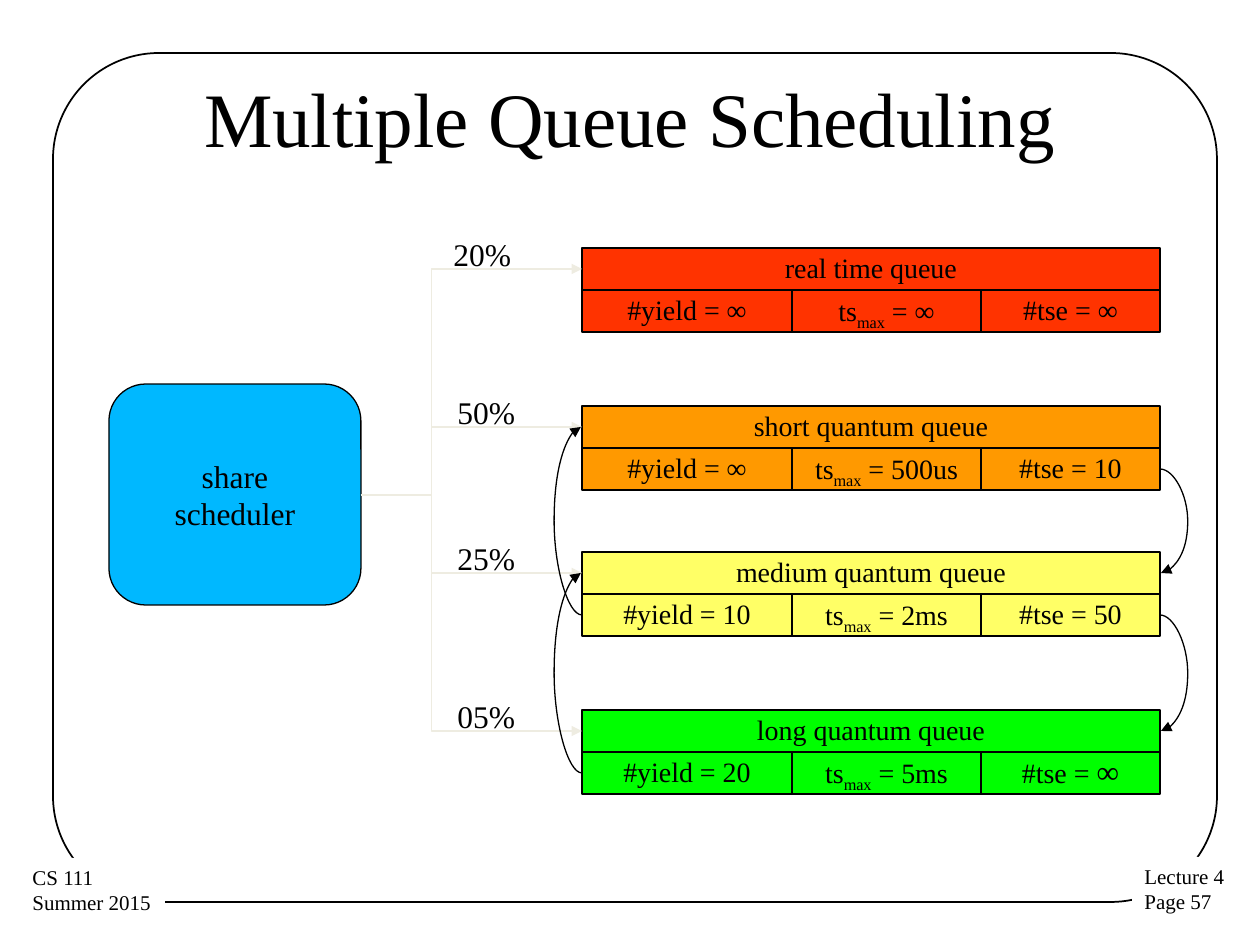
from dataclasses import dataclass

from lxml.etree import SubElement
from pptx import Presentation
from pptx.dml.color import RGBColor
from pptx.enum.shapes import MSO_CONNECTOR as Link, MSO_SHAPE as Kind
from pptx.enum.text import MSO_ANCHOR as Anchor, PP_ALIGN as Align
from pptx.oxml.ns import qn
from pptx.util import Pt

PX = 914400 / 126  # EMU in one px


@dataclass(frozen=True)
class Theme:
    font: str = "Times New Roman"
    ink: str = "000000"
    paper: str = "FFFFFF"
    pale: str = "EEECE1"
    blue: str = "00B8FF"
    red: str = "FF3300"
    orange: str = "FF9900"
    yellow: str = "FFFF66"
    green: str = "00FF00"
    title: int = 44
    body: int = 18
    cell: int = 16
    foot: int = 12
    thin: float = 0.75


T = Theme()
ROW = 42
COLS = (210, 189, 179)
# top, name, colour, share, label left, yield, time slice, tse runs
QUEUES = (
    (248, "real time queue", T.red, "20%", 441, "∞", "∞", [("#tse = ∞", T.cell)]),
    (406, "short quantum queue", T.orange, "50%", 445, "∞", "500us",
     [("#tse = 10", T.cell)]),
    (552, "medium quantum queue", T.yellow, "25%", 445, "10", "2ms",
     [("#tse = 50", T.cell)]),
    (710, "long quantum queue", T.green, "05%", 445, "20", "5ms",
     [("#tse = ", T.cell), ("∞", T.body)]),
)


def emu(*nums):
    return [round(n * PX) for n in nums]


def rgb(code):
    return RGBColor.from_string(code)


def write(shape, paras, align=Align.LEFT, anchor=Anchor.TOP, wrap=False, space=None):
    """Each paragraph is a list of runs: (text, size) or (text, size, baseline)."""
    frame = shape.text_frame
    frame.word_wrap = wrap
    frame.vertical_anchor = anchor
    for i, runs in enumerate(paras):
        para = frame.add_paragraph() if i else frame.paragraphs[0]
        para.alignment = align
        para.line_spacing = space
        for text, size, *base in runs:
            run = para.add_run()
            run.text = text
            run.font.name = T.font
            run.font.size = Pt(size)
            run.font.color.rgb = rgb(T.ink)
            if base:
                run.font._element.set("baseline", str(base[0]))


def block(slide, kind, box, fill=None, line=None, width=T.thin):
    shape = slide.shapes.add_shape(kind, *emu(*box))
    shape.shadow.inherit = False
    if fill:
        shape.fill.solid()
        shape.fill.fore_color.rgb = rgb(fill)
    else:
        shape.fill.background()
    if line:
        shape.line.color.rgb = rgb(line)
        shape.line.width = Pt(width)
    else:
        shape.line.fill.background()
    return shape


def label(slide, box, paras, **style):
    write(slide.shapes.add_textbox(*emu(*box)), paras, **style)


def arrow(slide, kind, start, end, bend, color):
    """The bend is a share of the width, where the middle part runs."""
    link = slide.shapes.add_connector(kind, *emu(*start, *end))
    link.line.color.rgb = rgb(color)
    link.line.width = Pt(T.thin)
    props = link._element.spPr
    SubElement(link.line._get_or_add_ln(), qn("a:tailEnd"), type="triangle")
    SubElement(props, qn("a:effectLst"))
    guides = props.find(qn("a:prstGeom")).get_or_add_avLst()
    SubElement(guides, qn("a:gd"), name="adj1", fmla=f"val {round(bend * 100000)}")


def backdrop(slide, box):
    x, y, w, h = box
    # Rounded frame
    frame = block(slide, Kind.ROUNDED_RECTANGLE, box, line=T.ink, width=1)
    frame.adjustments[0] = 0.125
    # Footers that cover the lower corners
    feet = (
        ((x + w - 85, y + h - 45, 107, 64), ("Lecture 4", "Page 57")),
        ((x - 33, y + h - 44, 145, 64), ("CS 111", "Summer 2015")),
    )
    for place, lines in feet:
        foot = block(slide, Kind.RECTANGLE, place, T.paper)
        write(foot, [[(text, T.foot)] for text in lines])


def heading(slide, box):
    label(slide, box, [[("Multiple Queue Scheduling", T.title)]],
          align=Align.CENTER, anchor=Anchor.MIDDLE, wrap=True)


def queue(slide, box, name, fill, turns, slice_, tse):
    x, y, w, h = box
    cells = [((x, y, w, h), [(name, T.cell)])]
    details = (
        [(f"#yield = {turns}", T.cell)],
        [("ts", T.cell), ("max", T.cell, -25000), (f" = {slice_}", T.cell)],
        tse,
    )
    for wide, runs in zip(COLS, details):
        cells.append(((x, y + h, wide, h), runs))
        x += wide
    for place, runs in cells:
        cell = block(slide, Kind.RECTANGLE, place, fill, T.ink)
        write(cell, [runs], Align.CENTER, Anchor.MIDDLE, space=0.93)


def scheduler(slide, box):
    shape = block(slide, Kind.FLOWCHART_ALTERNATE_PROCESS, box, T.blue, T.ink)
    write(shape, [[("share", T.body)], [("scheduler", T.body)]],
          Align.CENTER, Anchor.MIDDLE)


def shares(slide, start, left):
    for top, *_ in QUEUES:
        arrow(slide, Link.ELBOW, start, (left, top + ROW // 2), 0.318, T.pale)
    for top, _, _, share, x, *_ in QUEUES:
        label(slide, (x, top - 19, 83, 50), [[(share, T.body)]])


def moves(slide, left, right):
    """Down on the right after a time slice end, up on the left after a yield."""
    tops = [row[0] for row in QUEUES[1:]]
    for high, low in zip(tops, tops[1:]):
        head = ROW // 2
        tail = ROW + head
        arrow(slide, Link.CURVE, (right, high + tail), (right + 1, low + head), 28, T.ink)
        arrow(slide, Link.CURVE, (left, low + tail), (left - 1, high + head), 28, T.ink)


def main():
    deck = Presentation()
    deck.slide_width, deck.slide_height = emu(1260, 945)
    slide = deck.slides.add_slide(deck.slide_layouts[6])
    left = 582
    wide = sum(COLS)

    backdrop(slide, (53, 53, 1164, 849))
    heading(slide, (63, 38, 1134, 157))
    for top, name, fill, _, _, turns, slice_, tse in QUEUES:
        queue(slide, (left, top, wide, ROW), name, fill, turns, slice_, tse)
    scheduler(slide, (109, 384, 252, 221))
    shares(slide, (361, 495), left)
    moves(slide, left, left + wide)
    deck.save("out.pptx")


if __name__ == "__main__":
    main()
